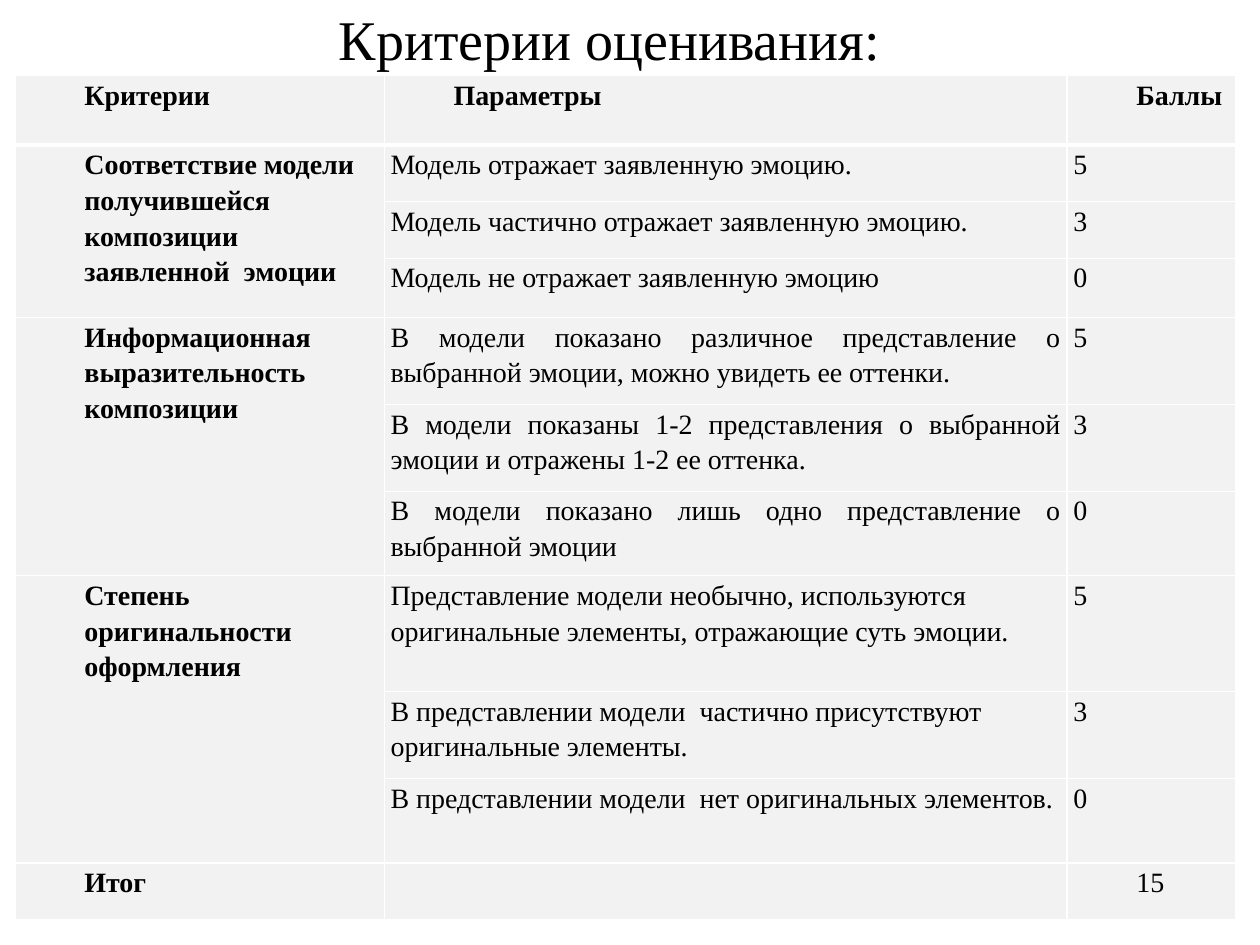
from dataclasses import dataclass

from lxml.etree import SubElement
from pptx import Presentation
from pptx.dml.color import RGBColor
from pptx.enum.text import MSO_ANCHOR, PP_ALIGN
from pptx.oxml.ns import qn
from pptx.util import Inches, Pt


@dataclass(frozen=True)
class Theme:
    font: str = "Times New Roman"
    title_size: int = 32
    body_size: int = 16
    ink: str = "000000"
    background: str = "FFFFFF"
    cell: str = "F2F2F2"


theme = Theme()


def write(paragraph, text, size, bold=False):
    run = paragraph.add_run()
    run.text = text
    run.font.name = theme.font
    run.font.size = Pt(size)
    run.font.bold = bold
    run.font.color.rgb = RGBColor.from_string(theme.ink)


def add_borders(cell, widths):
    properties = cell._tc.get_or_add_tcPr()
    for side, width in widths.items():
        line = SubElement(properties, qn(f"a:ln{side}"), w=str(Pt(width)))
        fill = SubElement(line, qn("a:solidFill"))
        SubElement(fill, qn("a:srgbClr"), val=theme.background)


JUSTIFY, LEFT = PP_ALIGN.JUSTIFY, PP_ALIGN.LEFT
headings = [("Критерии", JUSTIFY), ("Параметры", JUSTIFY), ("Баллы", LEFT)]
points = ["5", "3", "0"]
criteria = [
    ("Соответствие модели получившейся композиции заявленной  эмоции", JUSTIFY, [
        "Модель отражает заявленную эмоцию.",
        "Модель частично отражает заявленную эмоцию.",
        "Модель не отражает заявленную эмоцию",
    ]),
    ("Информационная выразительность композиции", JUSTIFY, [
        "В модели показано различное представление о выбранной эмоции, можно увидеть ее оттенки.",
        "В модели показаны 1-2 представления о выбранной эмоции и отражены 1-2 ее оттенка.",
        "В модели показано лишь одно представление о выбранной эмоции",
    ]),
    ("Степень оригинальности оформления", LEFT, [
        "Представление модели необычно, используются оригинальные элементы, отражающие суть эмоции.",
        "В представлении модели  частично присутствуют оригинальные элементы.",
        "В представлении модели  нет оригинальных элементов.",
    ]),
]
column_widths = [2.93, 5.42, 1.34]
row_heights = [0.55, 0.45, 0.45, 0.47, 0.69, 0.69, 0.67, 0.92, 0.69, 0.67, 0.45]
last_row = len(row_heights) - 1

presentation = Presentation()
presentation.slide_width = Inches(10)
presentation.slide_height = Inches(7.5)
slide = presentation.slides.add_slide(presentation.slide_layouts[6])
slide.background.fill.solid()
slide.background.fill.fore_color.rgb = RGBColor.from_string(theme.background)

title = slide.shapes.add_textbox(Inches(0.59), Inches(-0.5), Inches(8.5), Inches(1.61)).text_frame
title.word_wrap = True
title.vertical_anchor = MSO_ANCHOR.MIDDLE
title.paragraphs[0].alignment = PP_ALIGN.CENTER
write(title.paragraphs[0], "Критерии оценивания:", theme.title_size)

rubric = slide.shapes.add_table(
    len(row_heights), len(column_widths), Inches(0.12), Inches(0.6),
    Inches(sum(column_widths)), Inches(sum(row_heights))).table
rubric.first_row = False
rubric.horz_banding = False
for column, width in zip(rubric.columns, column_widths):
    column.width = Inches(width)
for row, height in zip(rubric.rows, row_heights):
    row.height = Inches(height)

for row in range(len(row_heights)):
    for column in range(len(column_widths)):
        cell = rubric.cell(row, column)
        cell.margin_left = cell.margin_right = Inches(0.05)
        cell.margin_top = cell.margin_bottom = 0
        add_borders(cell, {"L": 1, "R": 1, "T": 3 if row == 1 else 1, "B": 3 if row == 0 else 1})
        cell.fill.solid()
        cell.fill.fore_color.rgb = RGBColor.from_string(theme.cell)

entries = [(0, column, text, align, True, True) for column, (text, align) in enumerate(headings)]
for group, (criterion, align, levels) in enumerate(criteria):
    first = 1 + group * len(points)
    rubric.cell(first, 0).merge(rubric.cell(first + len(points) - 1, 0))
    entries.append((first, 0, criterion, LEFT, True, True))
    for row, (level, score) in enumerate(zip(levels, points), first):
        entries.append((row, 1, level, align, False, False))
        entries.append((row, 2, score, JUSTIFY, False, False))
entries.append((last_row, 0, "Итог", JUSTIFY, True, True))
entries.append((last_row, 2, "15", JUSTIFY, False, True))

for row, column, text, align, bold, indented in entries:
    paragraph = rubric.cell(row, column).text_frame.paragraphs[0]
    paragraph.alignment = align
    paragraph.line_spacing = 1.15
    if indented:
        paragraph._p.get_or_add_pPr().set("marL", str(Inches(0.5)))
        paragraph._p.get_or_add_pPr().set("indent", "0")
    else:
        paragraph.space_after = Pt(10)
    write(paragraph, text, theme.body_size, bold)

presentation.save("out.pptx")
